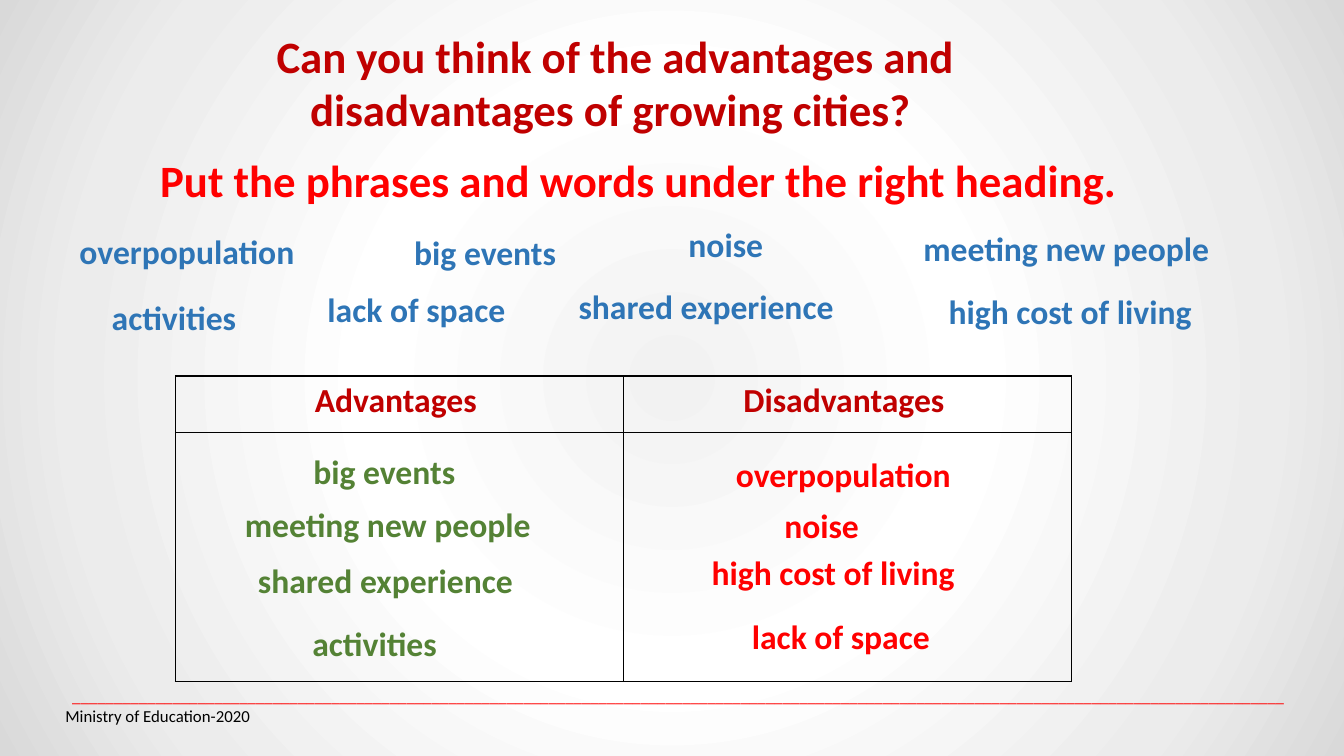
from pptx import Presentation
from pptx.dml.color import RGBColor as RGB
from pptx.enum.text import MSO_ANCHOR as ANCHOR, MSO_AUTO_SIZE as AUTO, PP_ALIGN as ALIGN
from pptx.oxml import parse_xml
from pptx.oxml.ns import nsdecls
from pptx.util import Emu, Pt

COLORS = {"title": "C00000", "red": "FF0000", "blue": "2E75B6",
          "green": "548235", "black": "000000"}
BACKGROUND = [(0, "F2F2F2"), (39, "FFFFFF"), (78, "ECECEC"), (100, "D9D9D9")]

# word: width, position in the word bank, position in the table, answer colour
WORDS = {
    "overpopulation": (236, (69, 224), (720, 445), "red"),
    "high cost of living": (271, (931, 281), (696, 540), "red"),
    "noise": (95, (673, 214), (768, 493), "red"),
    "lack of space": (206, (315, 279), (736, 603), "red"),
    "meeting new people": (307, (906, 218), (233, 492), "green"),
    "activities": (146, (101, 287), (300, 610), "green"),
    "big events": (162, (401, 222), (301, 440), "green"),
    "shared experience": (275, (564, 276), (246, 548), "green"),
}


def px(n):
    return Emu(n * 9144)


class Deck:
    font = "Calibri"

    def __init__(self, width, height):
        self.prs = Presentation()
        self.prs.slide_width, self.prs.slide_height = px(width), px(height)
        self.s = self.prs.slides.add_slide(self.prs.slide_layouts[5])

    def background(self, stops):
        gs = "".join(f'<a:gs pos="{pos * 1000}"><a:srgbClr val="{c}"/></a:gs>'
                     for pos, c in stops)
        bg = parse_xml(
            f'<p:bg {nsdecls("p", "a")}><p:bgPr><a:gradFill rotWithShape="1">'
            f'<a:gsLst>{gs}</a:gsLst><a:path path="circle"><a:fillToRect l="50000" '
            f't="50000" r="50000" b="50000"/></a:path></a:gradFill><a:effectLst/>'
            f'</p:bgPr></p:bg>')
        self.s.element.cSld.insert(0, bg)

    def run(self, p, text, size, color, bold=True):
        r = p.add_run()
        r.text = text
        r.font.name, r.font.size, r.font.bold = self.font, Pt(size), bold
        r.font.color.rgb = RGB.from_string(COLORS[color])

    def title(self, box, lines, size, color):
        sp = self.s.shapes.title
        sp.left, sp.top, sp.width, sp.height = map(px, box)
        tf = sp.text_frame
        tf.word_wrap, tf.vertical_anchor = True, ANCHOR.TOP
        tf.auto_size = AUTO.SHAPE_TO_FIT_TEXT
        p = tf.paragraphs[0]
        p.alignment = ALIGN.CENTER
        for i, line in enumerate(lines):
            if i:
                p.add_line_break()
            self.run(p, line, size, color)

    def label(self, box, text, size, color, spaced=False):
        tf = self.s.shapes.add_textbox(*map(px, box)).text_frame
        tf.word_wrap, tf.auto_size = False, AUTO.SHAPE_TO_FIT_TEXT
        p = tf.paragraphs[0]
        if spaced:
            p.line_spacing, p.space_after = 1.07, Pt(8)
        self.run(p, text, size, color)

    def footer(self, box, rule, text):
        tf = self.s.shapes.add_textbox(*map(px, box)).text_frame
        tf.word_wrap, tf.vertical_anchor = True, ANCHOR.MIDDLE
        p = tf.paragraphs[0]
        p.alignment = ALIGN.CENTER
        self.run(p, rule, 12, "red", bold=False)
        self.run(tf.add_paragraph(), text, 12, "black", bold=False)

    def table(self, box, heads, heights):
        tbl = self.s.shapes.add_table(len(heights), len(heads), *map(px, box)).table
        tbl.first_row = tbl.horz_banding = False
        for row, height in zip(tbl.rows, heights):
            row.height = px(height)
        for cell in tbl.iter_cells():
            cell.fill.background()
            self.borders(cell)
        for i, head in enumerate(heads):
            p = tbl.cell(0, i).text_frame.paragraphs[0]
            p.alignment = ALIGN.CENTER
            self.run(p, head, 24, "title")

    def borders(self, cell):
        tcPr = cell._tc.get_or_add_tcPr()
        for i, side in enumerate("LRTB"):
            tcPr.insert(i, parse_xml(
                f'<a:ln{side} {nsdecls("a")} w="12700"><a:solidFill>'
                f'<a:srgbClr val="{COLORS["black"]}"/></a:solidFill></a:ln{side}>'))


def main():
    deck = Deck(1333, 750)
    deck.background(BACKGROUND)

    # Footer, question and instruction
    deck.footer((55, 680, 1237, 40), "_" * 145, "Ministry of Education-2020")
    deck.title((101, 23, 1019, 118), ["Can you think of the advantages and",
                                      "disadvantages of growing cities? "], 32, "title")
    deck.label((149, 147, 987, 64),
               "Put the phrases and words under the right heading.", 32, "red")

    # Answer table
    deck.table((174, 373, 889, 303), ["Advantages ", "Disadvantages "], [56, 247])

    # Word bank, and the same words sorted in the table
    for word, (width, bank, answer, color) in WORDS.items():
        spaced = word != "overpopulation"
        for spot, shade in ((bank, "blue"), (answer, color)):
            deck.label((*spot, width, 51), word, 24, shade, spaced)

    deck.prs.save("out.pptx")


if __name__ == "__main__":
    main()
